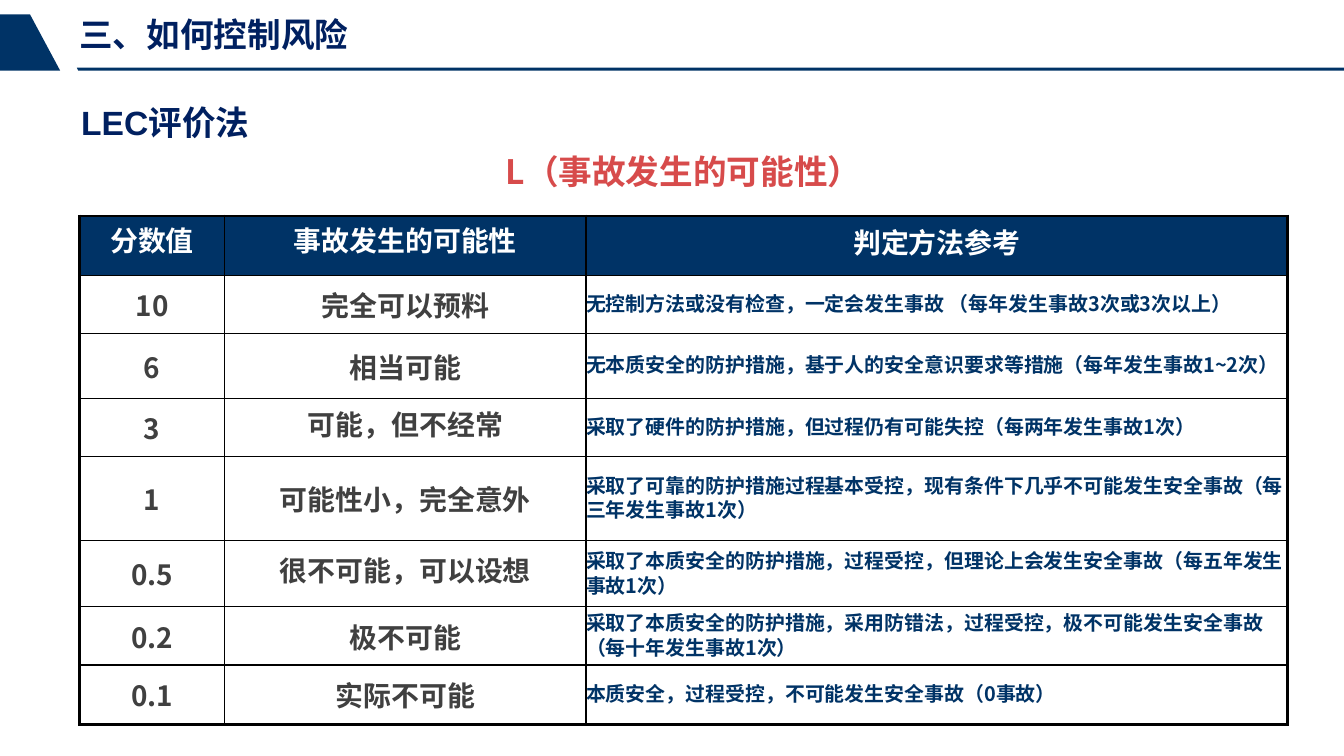
from dataclasses import dataclass

from lxml import etree
from pptx import Presentation
from pptx.dml.color import RGBColor
from pptx.enum.text import MSO_ANCHOR, PP_ALIGN
from pptx.oxml.ns import qn
from pptx.util import Pt

LEFT, CENTER = PP_ALIGN.LEFT, PP_ALIGN.CENTER
MIDDLE = MSO_ANCHOR.MIDDLE


@dataclass(frozen=True)
class Theme:
    navy: str = "003366"
    title: str = "002060"
    red: str = "D74B4B"
    grey: str = "404040"
    white: str = "FFFFFF"
    black: str = "000000"
    latin: str = "Arial"
    cjk: str = "Noto Sans CJK SC"
    heading_size: float = 25.3
    cell_size: float = 21
    note_size: float = 15
    thin: float = 1
    thick: float = 2.25


T = Theme()

COLS = [109.4, 272.2, 528.5]
ROWS = [44.6, 43.9, 49, 43.9, 63.4, 49.7, 43.9, 44.6]
TIGHT_ROWS = (0, 3, 5)  # likelihood cells set with reduced line spacing
LIKELIHOOD = [
    ("分数值", "事故发生的可能性", "判定方法参考"),
    ("10", "完全可以预料", "无控制方法或没有检查，一定会发生事故 （每年发生事故3次或3次以上）"),
    ("6", "相当可能", "无本质安全的防护措施，基于人的安全意识要求等措施（每年发生事故1~2次）"),
    ("3", "可能，但不经常", "采取了硬件的防护措施，但过程仍有可能失控（每两年发生事故1次）"),
    ("1", "可能性小，完全意外",
     "采取了可靠的防护措施过程基本受控，现有条件下几乎不可能发生安全事故（每三年发生事故1次）"),
    ("0.5", "很不可能，可以设想",
     "采取了本质安全的防护措施，过程受控，但理论上会发生安全事故（每五年发生事故1次）"),
    ("0.2", "极不可能",
     "采取了本质安全的防护措施，采用防错法，过程受控，极不可能发生安全事故（每十年发生事故1次）"),
    ("0.1", "实际不可能", "本质安全，过程受控，不可能发生安全事故（0事故）"),
]


def set_format(obj, values):
    for name, value in values.items():
        setattr(obj, name, value)


def write(tf, text, size, color, font=T.cjk, **paragraph):
    p = tf.paragraphs[0]
    set_format(p, paragraph)
    r = p.add_run()
    r.text = text
    set_format(r.font, {"size": Pt(size), "bold": True, "name": font})
    r.font.color.rgb = RGBColor.from_string(color)
    # East Asian typeface follows the Latin one
    ea = etree.Element(qn("a:ea"), typeface=T.cjk)
    r.font._element.find(qn("a:latin")).addnext(ea)


def margins(side, top, bottom):
    return {"margin_left": Pt(side), "margin_right": Pt(side),
            "margin_top": Pt(top), "margin_bottom": Pt(bottom)}


def add_text(s, box, text, color, inset=(0, 0, 0), **style):
    tf = s.shapes.add_textbox(*map(Pt, box)).text_frame
    set_format(tf, {"word_wrap": True, **margins(*inset)})
    write(tf, text, T.heading_size, color, **style)


def add_outline(s, points):
    start, *rest = [(Pt(x), Pt(y)) for x, y in points]
    builder = s.shapes.build_freeform(*start)
    builder.add_line_segments(rest, close=True)
    sp = builder.convert_to_shape()
    sp.shadow.inherit = False
    sp.fill.solid()
    sp.fill.fore_color.rgb = RGBColor.from_string(T.navy)
    sp.line.fill.background()


def set_borders(cell, widths):
    tcPr = cell._tc.get_or_add_tcPr()
    for side, width in widths.items():
        ln = etree.SubElement(tcPr, qn(f"a:ln{side}"), w=str(int(Pt(width))))
        fill = etree.SubElement(ln, qn("a:solidFill"))
        etree.SubElement(fill, qn("a:srgbClr"), val=T.black)


def cell_style(row, col):
    """Return insets, text size, text colour and paragraph format."""
    header, note = row == 0, col == len(COLS) - 1
    if note:
        inset = (0, 0, 0)
    else:
        inset = (7.2, 0, 3.6) if header else (7.92, 3.6, 3.6)
    if note and not header:
        return inset, T.note_size, T.navy, {"alignment": LEFT, "line_spacing": Pt(18.8)}
    tight = header or (col == 1 and row in TIGHT_ROWS)
    paragraph = {"alignment": CENTER, "line_spacing": 0.65 if tight else 1.0}
    return inset, T.cell_size, T.white if header else T.grey, paragraph


def add_likelihood_table(s, left, top):
    frame = s.shapes.add_table(len(ROWS), len(COLS), Pt(left), Pt(top),
                               Pt(sum(COLS)), Pt(sum(ROWS)))
    table = frame.table
    set_format(table, {"first_row": False, "horz_banding": False})
    for column, width in zip(table.columns, COLS):
        column.width = Pt(width)
    for row, height in zip(table.rows, ROWS):
        row.height = Pt(height)

    last_row, last_col = len(ROWS) - 1, len(COLS) - 1
    for i, texts in enumerate(LIKELIHOOD):
        for j, text in enumerate(texts):
            cell = table.cell(i, j)
            inset, size, color, paragraph = cell_style(i, j)
            set_format(cell, {"vertical_anchor": MIDDLE, **margins(*inset)})
            outer = {"L": j == 0, "R": j == last_col, "T": i == 0, "B": i == last_row}
            set_borders(cell, {side: T.thick if edge else T.thin
                               for side, edge in outer.items()})
            cell.fill.solid()
            cell.fill.fore_color.rgb = RGBColor.from_string(T.white if i else T.navy)
            write(cell.text_frame, text, size, color, **paragraph)


def main():
    prs = Presentation()
    set_format(prs, {"slide_width": Pt(1012.32), "slide_height": Pt(569.52)})
    s = prs.slides.add_slide(prs.slide_layouts[6])

    # Header rule and corner block
    add_outline(s, [(57.9, 51), (1012.32, 51), (1012.32, 53.3), (59, 53.3)])
    add_outline(s, [(22.6, 10.8), (45.4, 53.3), (0, 53.3), (0, 10.8)])

    # Headings
    add_text(s, (59.8, 10.8, 327, 31), "三、如何控制风险", T.title, font=T.latin)
    add_text(s, (61.2, 77, 327, 31), "LEC评价法", T.title, font=T.latin)
    add_text(s, (59.8, 110.2, 910, 54), "L（事故发生的可能性）", T.red,
             inset=(7.92, 3.6, 3.6), alignment=CENTER)

    # Likelihood scores
    add_likelihood_table(s, 59.8, 162.7)

    prs.save("out.pptx")


if __name__ == "__main__":
    main()
